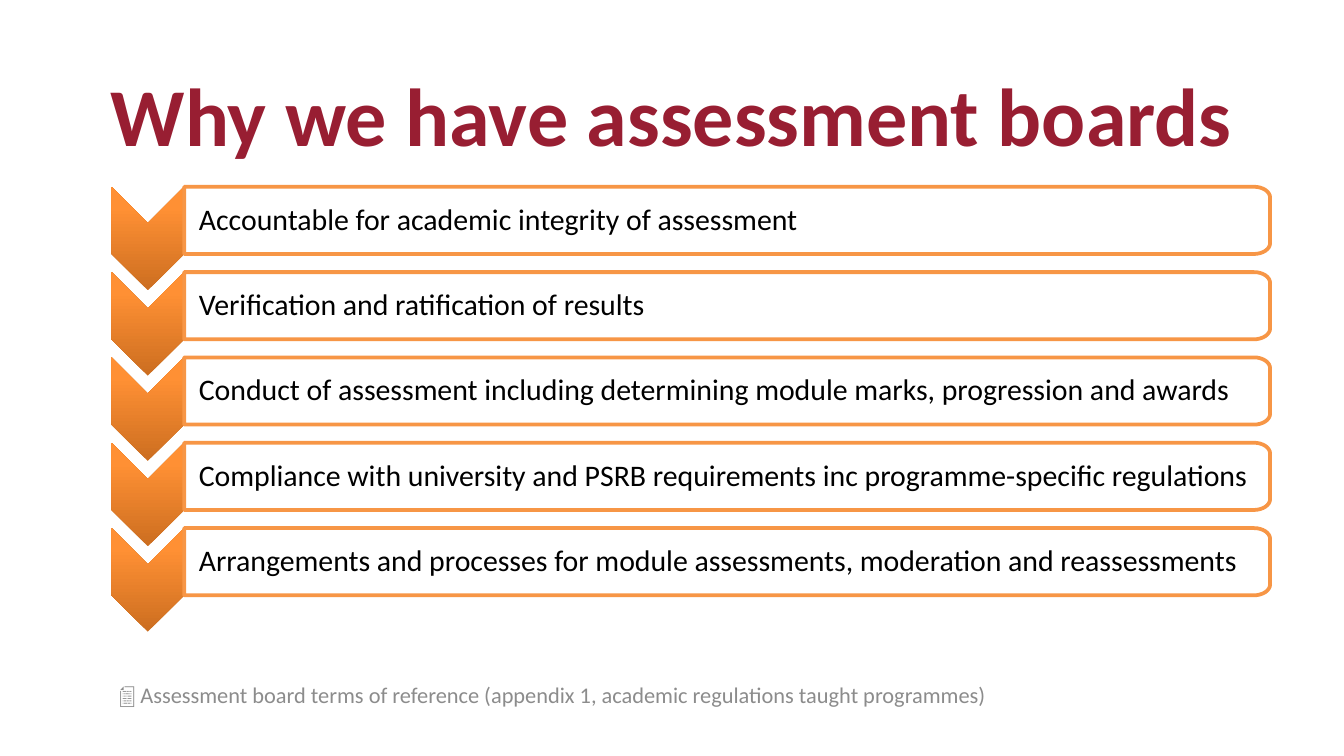
from copy import deepcopy
from math import cos, pi, sin

from pptx import Presentation
from pptx.dml.color import RGBColor
from pptx.enum.text import MSO_ANCHOR as Anchor, MSO_AUTO_SIZE as AutoSize, PP_ALIGN as Align
from pptx.oxml.ns import qn
from pptx.util import Inches, Pt

CRIMSON = RGBColor(0x98, 0x1E, 0x32)
ORANGE = RGBColor(0xF7, 0x96, 0x46)
BLACK = RGBColor(0x00, 0x00, 0x00)
WHITE = RGBColor(0xFF, 0xFF, 0xFF)
GREY = RGBColor(0x8C, 0x8C, 0x8C)
GRADIENT = [
    (0, RGBColor(0xCC, 0x6E, 0x20)),
    (0.8, RGBColor(0xFF, 0x90, 0x34)),
    (1, RGBColor(0xFF, 0x91, 0x36)),
]

REASONS = [
    "Accountable for academic integrity of assessment",
    "Verification and ratification of results",
    "Conduct of assessment including determining module marks, progression and awards",
    "Compliance with university and PSRB requirements inc programme-specific regulations",
    "Arrangements and processes for module assessments, moderation and reassessments",
]

FIRST_TOP, LAST_TOP = 1.39, 3.93
PITCH = (LAST_TOP - FIRST_TOP) / (len(REASONS) - 1)
CHEVRON_LEFT, CHEVRON_WIDTH, POINT_DEPTH = 0.83, 0.54, 0.27
BOX_LEFT, BOX_RIGHT, BOX_HEIGHT = 1.37, 9.45, 0.5
CORNER_WIDTH, CORNER_HEIGHT, CORNER_STEPS = 0.12, 0.08, 8


def write_text(shape, text, size, color, bold=False, align=Align.LEFT,
               line_spacing=None, insets=(0.1, 0.05, 0.1, 0.05)):
    frame = shape.text_frame
    frame.word_wrap = True
    frame.auto_size = AutoSize.NONE
    frame.vertical_anchor = Anchor.MIDDLE
    frame.margin_left, frame.margin_top, frame.margin_right, frame.margin_bottom = map(Inches, insets)
    paragraph = frame.paragraphs[0]
    paragraph.text = text
    paragraph.alignment = align
    paragraph.line_spacing = line_spacing
    font = paragraph.runs[0].font
    font.name, font.size, font.bold = "Calibri", Pt(size), bold
    font.color.rgb = color


def place(shape, left, top, width, height):
    shape.left, shape.top = Inches(left), Inches(top)
    shape.width, shape.height = Inches(width), Inches(height)


def add_outline(slide, points):
    points = [(Inches(x), Inches(y)) for x, y in points]
    builder = slide.shapes.build_freeform(*points[0])
    builder.add_line_segments(points[1:], close=True)
    shape = builder.convert_to_shape()
    shape.shadow.inherit = False
    return shape


def fill_gradient(shape):
    shape.fill.gradient()
    shape.fill.gradient_angle = 90
    stop_list = shape.element.spPr.find(qn("a:gradFill")).find(qn("a:gsLst"))
    stop_list.append(deepcopy(stop_list[-1]))
    for stop, (position, color) in zip(shape.fill.gradient_stops, GRADIENT):
        stop.position = position
        stop.color.rgb = color


def add_chevron(slide, top):
    left, right = CHEVRON_LEFT, CHEVRON_LEFT + CHEVRON_WIDTH
    middle, bottom = left + CHEVRON_WIDTH / 2, top + BOX_HEIGHT
    shape = add_outline(slide, [
        (right, top), (right, bottom), (middle, bottom + POINT_DEPTH),
        (left, bottom), (left, top), (middle, top + POINT_DEPTH),
    ])
    fill_gradient(shape)
    shape.line.fill.background()


def add_reason_box(slide, top, text):
    bottom = top + BOX_HEIGHT
    center = BOX_RIGHT - CORNER_WIDTH
    angles = [pi / 2 * step / CORNER_STEPS for step in range(CORNER_STEPS + 1)]
    lower = [(center + CORNER_WIDTH * cos(angle),
              bottom - CORNER_HEIGHT + CORNER_HEIGHT * sin(angle)) for angle in angles]
    upper = [(x, top + bottom - y) for x, y in reversed(lower)]
    shape = add_outline(slide, lower + [(BOX_LEFT, bottom), (BOX_LEFT, top)] + upper)
    shape.fill.solid()
    shape.fill.fore_color.rgb = WHITE
    shape.line.color.rgb = ORANGE
    shape.line.width = Pt(2)
    write_text(shape, text, size=16, color=BLACK, line_spacing=0.9,
               insets=(0.11, 0.03, 0.03, 0.03))


def add_footnote(slide, text):
    shape = slide.shapes.add_textbox(0, 0, 0, 0)
    place(shape, 0.79, 5.02, 7.99, 0.3)
    write_text(shape, text, size=12, color=GREY)


def main():
    presentation = Presentation()
    presentation.slide_width, presentation.slide_height = Inches(10), Inches(10 * 9 / 16)
    slide = presentation.slides.add_slide(presentation.slide_layouts[5])
    title = slide.shapes.title
    place(title, 0.69, 0.3, 8.62, 1.09)
    write_text(title, "Why we have assessment boards", size=44, color=CRIMSON,
               bold=True, align=Align.CENTER)
    for index, reason in enumerate(REASONS):
        top = FIRST_TOP + index * PITCH
        add_chevron(slide, top)
        add_reason_box(slide, top, reason)
    add_footnote(slide, "📄 Assessment board terms of reference (appendix 1, academic regulations taught programmes)")
    presentation.save("out.pptx")


if __name__ == "__main__":
    main()
